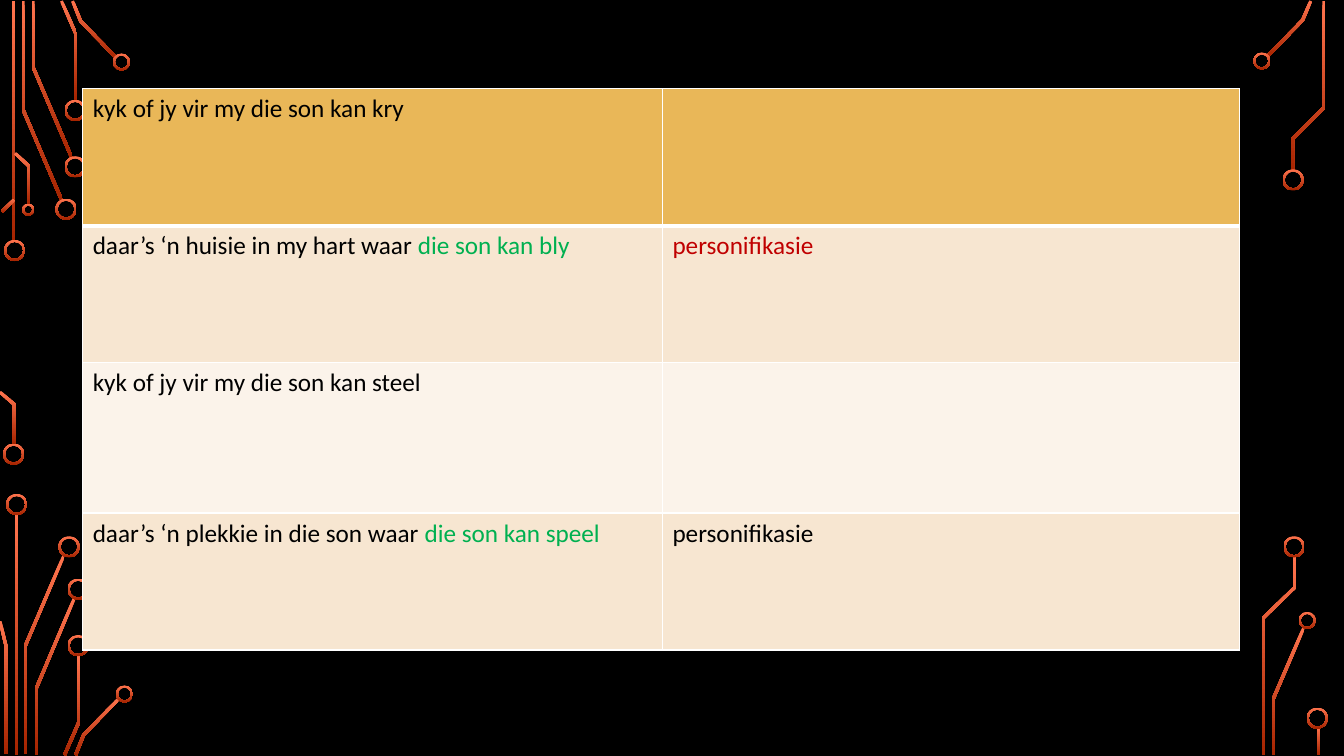
"""Build a slide with a table of poem lines on a circuit-board backdrop."""
import math

import lxml.etree
import pptx
import pptx.dml.color
import pptx.enum.shapes
import pptx.oxml.ns
import pptx.util

Inches = pptx.util.Inches
SHAPES = pptx.enum.shapes.MSO_SHAPE
COLOURS = {
    "background": "000000", "glow": "FF744E", "ember": "A62400",
    "header": "E9B758", "band": "F7E6D1", "pale": "FBF3EA",
    "border": "FFFFFF", "text": "000000", "green": "00B050", "red": "C00000",
}
TRACE_WIDTH = 0.03
RING_WIDTH = 0.02

BARS = [(0.12, 0.01, 2.39), (0.15, 5.1, 2.39), (13.06, 7.21, 0.28)]
TRACES = [
    [(0.23, 0.01), (0.23, 1.09), (0.61, 1.98)],
    [(0.33, 0.01), (0.33, 0.67), (0.71, 1.56)],
    [(0.61, 0.01), (0.75, 0.33), (0.75, 1)],
    [(0.72, 0.01), (0.8, 0.21), (1.15, 0.57)],
    [(0.02, 2.1), (0.14, 1.98)],
    [(0, 3.89), (0.14, 4.01), (0.14, 4.41)],
    [(0.15, 1.52), (0.29, 1.65), (0.29, 2.03)],
    [(0.25, 7.48), (0.25, 6.41), (0.63, 5.52)],
    [(0.06, 7.48), (0.06, 6.41), (0, 6.16)],
    [(0.36, 7.49), (0.36, 6.83), (0.74, 5.93)],
    [(0.64, 7.49), (0.78, 7.17), (0.78, 6.5)],
    [(0.75, 7.49), (0.83, 7.29), (1.18, 6.93)],
    [(12.57, 0.56), (12.92, 0.2), (13, 0.01)],
    [(12.63, 7.49), (12.63, 6.93), (12.93, 6.23)],
    [(12.82, 1.69), (12.82, 1.38), (13.13, 1.07), (13.13, 0.01)],
    [(12.53, 7.49), (12.53, 6.13), (12.84, 5.83), (12.84, 5.52)],
]
RINGS = {
    0.21: [
        (0.04, 2.38), (0.03, 4.4), (0.55, 1.97), (0.64, 1.55), (0.64, 0.99),
        (0.06, 4.9), (0.58, 5.32), (0.67, 5.74), (0.67, 6.3),
        (12.72, 1.68), (12.73, 5.32), (12.96, 7.02),
    ],
    0.17: [(1.12, 0.53), (1.15, 6.8), (12.43, 0.52), (12.88, 6.07)],
    0.12: [(0.22, 2.02)],
}

COLUMN_WIDTHS = [5.75, 5.72]
ROW_HEIGHTS = [1.36, 1.36, 1.49, 1.36]
ROW_FILLS = ["header", "band", "pale", "band"]
POEM = [
    [[("kyk of jy vir my die son kan kry", "text")], []],
    [[("daar’s ‘n huisie in my hart waar ", "text"), ("die son kan bly", "green")],
     [("personifikasie", "red")]],
    [[("kyk of jy vir my die son kan steel", "text")], []],
    [[("daar’s ‘n plekkie in die son waar ", "text"), ("die son kan speel", "green")],
     [("personifikasie", "text")]],
]
TEXT_FORMAT = {"name": "Calibri", "size": pptx.util.Pt(18), "bold": False}


def colour(name):
    """Return the named colour."""
    return pptx.dml.color.RGBColor.from_string(COLOURS[name])


def apply_glow(shape):
    """Give a shape the vertical orange gradient without line or shadow."""
    shape.shadow.inherit = False
    shape.line.fill.background()
    shape.fill.gradient()
    shape.fill.gradient_angle = 270
    for stop, name in zip(shape.fill.gradient_stops, ("glow", "ember")):
        stop.color.rgb = colour(name)


def add_bar(page, left, top, height):
    """Add a straight vertical circuit line."""
    apply_glow(page.shapes.add_shape(
        SHAPES.RECTANGLE, Inches(left), Inches(top), Inches(TRACE_WIDTH), Inches(height)))


def add_ring(page, left, top, diameter):
    """Add a circuit terminal."""
    ring = page.shapes.add_shape(
        SHAPES.DONUT, Inches(left), Inches(top), Inches(diameter), Inches(diameter))
    ring.adjustments[0] = RING_WIDTH / diameter
    apply_glow(ring)


def outline(points):
    """Return the mitred outline around a centre line."""
    normals = []
    for (x1, y1), (x2, y2) in zip(points, points[1:]):
        length = math.hypot(x2 - x1, y2 - y1)
        normals.append(((y1 - y2) / length, (x2 - x1) / length))
    left, right = [], []
    for (x, y), (ax, ay), (bx, by) in zip(points, normals[:1] + normals, normals + normals[-1:]):
        reach = TRACE_WIDTH / 2 / (1 + ax * bx + ay * by)
        dx, dy = (ax + bx) * reach, (ay + by) * reach
        left.append((Inches(x + dx), Inches(y + dy)))
        right.append((Inches(x - dx), Inches(y - dy)))
    return left + right[::-1]


def add_trace(page, points):
    """Add a bent circuit line."""
    start, *corners = outline(points)
    builder = page.shapes.build_freeform(*start)
    builder.add_line_segments(corners, close=True)
    apply_glow(builder.convert_to_shape())


def set_borders(cell, widths):
    """Draw the cell borders at the given point widths per side."""
    properties = cell._tc.get_or_add_tcPr()
    for position, (side, width) in enumerate(widths.items()):
        line = lxml.etree.Element(
            pptx.oxml.ns.qn(f"a:ln{side}"), w=str(pptx.util.Pt(width)))
        fill = lxml.etree.SubElement(line, pptx.oxml.ns.qn("a:solidFill"))
        lxml.etree.SubElement(fill, pptx.oxml.ns.qn("a:srgbClr"), val=COLOURS["border"])
        properties.insert(position, line)


def write_spans(cell, spans):
    """Write coloured spans into a cell."""
    para = cell.text_frame.paragraphs[0]
    for text, name in spans:
        span = para.add_run()
        span.text = text
        for attribute, value in TEXT_FORMAT.items():
            setattr(span.font, attribute, value)
        span.font.color.rgb = colour(name)


def add_poem_table(page):
    """Add the table of poem lines and their figures of speech."""
    table = page.shapes.add_table(
        len(POEM), len(COLUMN_WIDTHS), Inches(0.82), Inches(0.88),
        Inches(sum(COLUMN_WIDTHS)), Inches(sum(ROW_HEIGHTS))).table
    for column, width in zip(table.columns, COLUMN_WIDTHS):
        column.width = Inches(width)
    for index, row in enumerate(table.rows):
        row.height = Inches(ROW_HEIGHTS[index])
        widths = {"L": 1, "R": 1, "T": 3 if index == 1 else 1, "B": 3 if index == 0 else 1}
        for cell, spans in zip(row.cells, POEM[index]):
            cell.fill.solid()
            cell.fill.fore_color.rgb = colour(ROW_FILLS[index])
            set_borders(cell, widths)
            write_spans(cell, spans)


def main():
    """Build and save the deck."""
    deck = pptx.Presentation()
    deck.slide_width, deck.slide_height = Inches(13.33), Inches(7.5)
    page = deck.slides.add_slide(deck.slide_layouts[6])
    page.background.fill.solid()
    page.background.fill.fore_color.rgb = colour("background")
    for bar in BARS:
        add_bar(page, *bar)
    for points in TRACES:
        add_trace(page, points)
    for diameter, corners in RINGS.items():
        for left, top in corners:
            add_ring(page, left, top, diameter)
    add_poem_table(page)
    deck.save("out.pptx")


if __name__ == "__main__":
    main()
